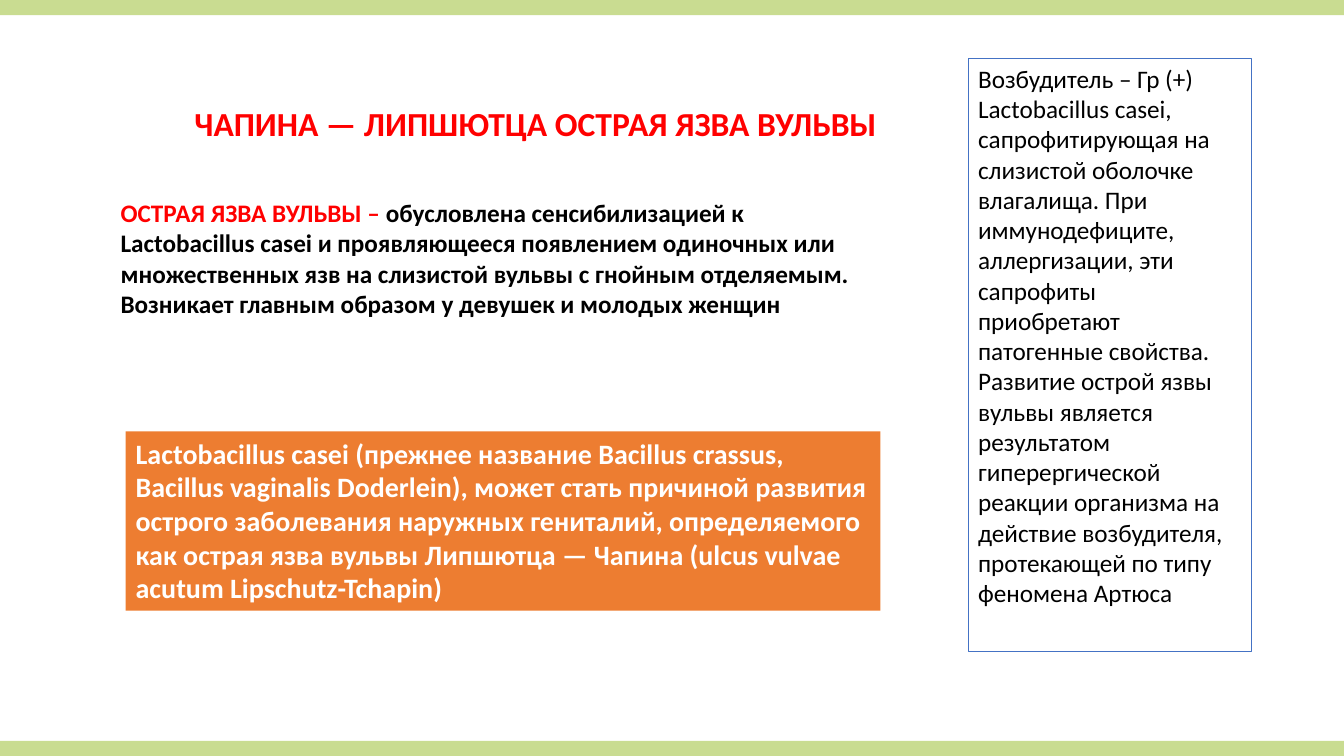
from pptx import Presentation
from pptx.dml.color import RGBColor
from pptx.enum.shapes import MSO_SHAPE as Shape
from pptx.enum.text import MSO_ANCHOR as Anchor, MSO_AUTO_SIZE as AutoSize, PP_ALIGN as Align
from pptx.util import Cm, Pt

WIDTH, HEIGHT, BAND = 33.87, 19.05, 0.38
COLORS = {
    "band": "C9DC91",
    "accent": "FF0000",
    "outline": "4472C4",
    "callout": "ED7D31",
    "text": "000000",
    "light": "FFFFFF",
}


class SlideBuilder:
    font = "Calibri"

    def __init__(self, slide):
        self.slide = slide

    def color(self, name):
        return RGBColor.from_string(COLORS[name])

    def rect(self, box, fill=None, line=None):
        panel = self.slide.shapes.add_shape(Shape.RECTANGLE, *map(Cm, box))
        panel.shadow.inherit = False
        if fill:
            panel.fill.solid()
            panel.fill.fore_color.rgb = self.color(fill)
        else:
            panel.fill.background()
        if line:
            panel.line.color.rgb = self.color(line)
            panel.line.width = Pt(0.75)
        else:
            panel.line.fill.background()
        return panel

    def textbox(self, box):
        return self.slide.shapes.add_textbox(*map(Cm, box))

    def add_text(self, holder, size, *parts, bold=True):
        frame = holder.text_frame
        frame.word_wrap = True
        frame.auto_size = AutoSize.SHAPE_TO_FIT_TEXT
        frame.vertical_anchor = Anchor.TOP
        paragraph = frame.paragraphs[0]
        paragraph.alignment = Align.LEFT
        font = paragraph.font
        font.name, font.size, font.bold = self.font, Pt(size), bold
        if len(parts) == 1:
            font.color.rgb = self.color(parts[0][1])
        for wording, color in parts:
            run = paragraph.add_run()
            run.text = wording
            if len(parts) > 1:
                run.font.color.rgb = self.color(color)


def main():
    deck = Presentation()
    deck.slide_width, deck.slide_height = Cm(WIDTH), Cm(HEIGHT)
    builder = SlideBuilder(deck.slides.add_slide(deck.slide_layouts[6]))

    for top in (0, HEIGHT - BAND):
        builder.rect((0, top, WIDTH, BAND), fill="band")

    title = builder.textbox((4.65, 2.46, 20.8, 1.27))
    builder.add_text(title, 24, ("ЧАПИНА — ЛИПШЮТЦА ОСТРАЯ ЯЗВА ВУЛЬВЫ", "accent"))

    pathogen = builder.rect((24.4, 1.47, 7.14, 14.96), line="outline")
    builder.add_text(
        pathogen, 18,
        ("Возбудитель – Гр (+) Lactobacillus casei, сапрофитирующая на слизистой "
         "оболочке влагалища. При иммунодефиците, аллергизации, эти сапрофиты "
         "приобретают патогенные свойства. Развитие острой язвы вульвы является "
         "результатом гиперергической реакции организма на действие возбудителя, "
         "протекающей по типу феномена Артюса", "text"),
        bold=False,
    )

    naming = builder.rect((3.17, 10.87, 19.02, 4.52), fill="callout")
    builder.add_text(
        naming, 20,
        ("Lactobacillus casei (прежнее название Bacillus crassus, Bacillus vaginalis "
         "Doderlein), может стать причиной развития острого заболевания наружных "
         "гениталий, определяемого как острая язва вульвы Липшютца — Чапина "
         "(ulcus vulvae acutum Lipschutz-Tchapin)", "light"),
    )

    definition = builder.textbox((2.79, 4.85, 19.38, 3.33))
    builder.add_text(
        definition, 18,
        ("ОСТРАЯ ЯЗВА ВУЛЬВЫ – ", "accent"),
        ("обусловлена сенсибилизацией к Lactobacillus casei и проявляющееся "
         "появлением одиночных или множественных язв на слизистой вульвы с гнойным "
         "отделяемым. Возникает главным образом у девушек и молодых женщин", "text"),
    )

    deck.save("out.pptx")


if __name__ == "__main__":
    main()
